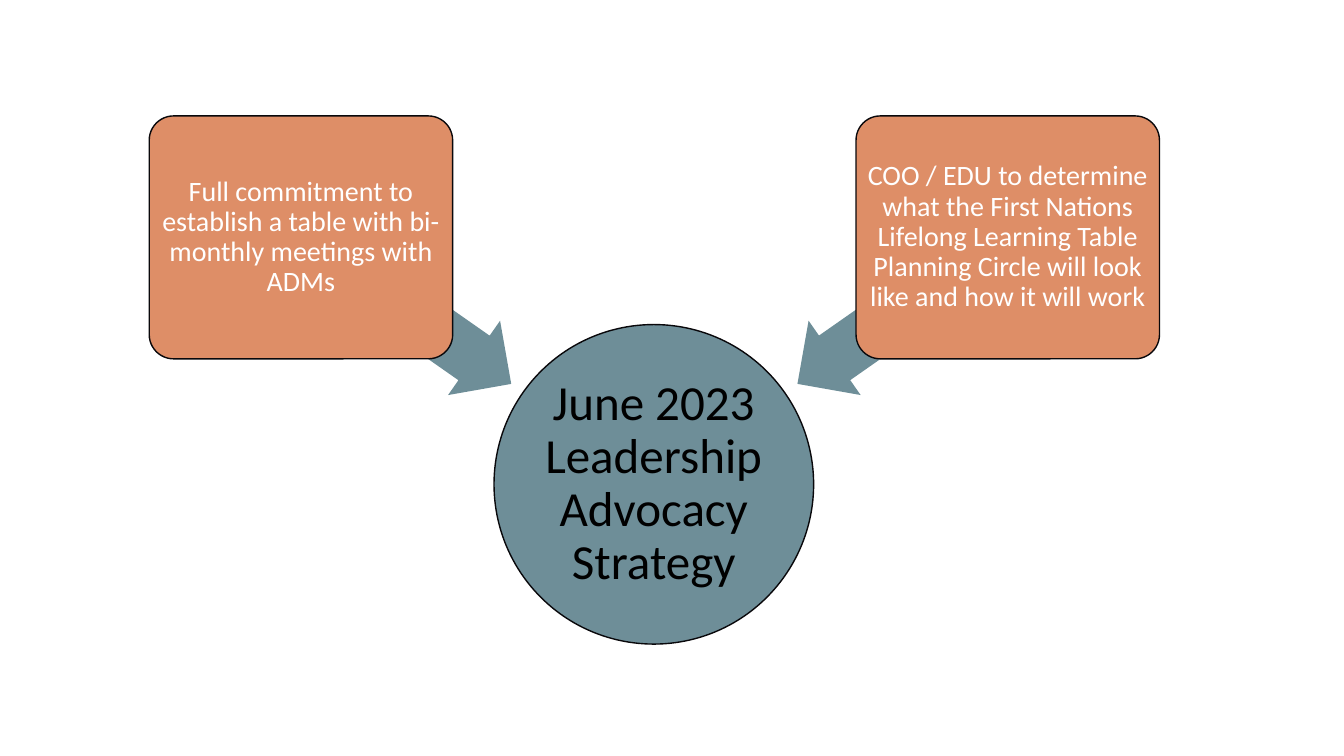
from dataclasses import dataclass

from pptx import Presentation
from pptx.dml.color import RGBColor
from pptx.enum.shapes import MSO_SHAPE
from pptx.enum.text import MSO_ANCHOR, PP_ALIGN
from pptx.shapes.autoshape import Shape
from pptx.slide import Slide
from pptx.util import Inches, Pt

OVAL = MSO_SHAPE.OVAL
ROUNDED = MSO_SHAPE.ROUNDED_RECTANGLE
LEFT_ARROW = MSO_SHAPE.LEFT_ARROW
MIDDLE = MSO_ANCHOR.MIDDLE
CENTER = PP_ALIGN.CENTER

TEAL, ORANGE, OUTLINE = "6E8E98", "DE8E67", "09080B"
BLACK, WHITE = "000000", "FFFFFF"
CARD_TOP, CARD_WIDTH, CARD_HEIGHT = 1.15, 3.01, 2.41
ARROW_TOP, ARROW_WIDTH, ARROW_HEIGHT = 2.63, 2.54, 0.9


@dataclass
class Commitment:
    text: str
    card_left: float
    arrow_left: float
    arrow_rotation: float


COMMITMENTS = [
    Commitment("Full commitment to establish a table with bi-monthly meetings with ADMs",
               1.48, 2.76, 215),
    Commitment("COO / EDU to determine what the First Nations Lifelong Learning Table "
               "Planning Circle will look like and how it will work",
               8.49, 7.68, 325),
]


def color(value: str) -> RGBColor:
    return RGBColor.from_string(value)


def add_box(page: Slide, kind: MSO_SHAPE, left: float, top: float, width: float,
            height: float, fill: str, line: str | None = None) -> Shape:
    box = page.shapes.add_shape(kind, Inches(left), Inches(top), Inches(width), Inches(height))
    box.shadow.inherit = False
    box.fill.solid()
    box.fill.fore_color.rgb = color(fill)
    if line:
        box.line.color.rgb = color(line)
        box.line.width = Pt(1)
    else:
        box.line.fill.background()
    return box


def write(box: Shape, text: str, *, size: float, ink: str, inset: float) -> None:
    frame = box.text_frame
    frame.word_wrap = True
    frame.vertical_anchor = MIDDLE
    frame.margin_left = frame.margin_right = Inches(inset)
    frame.margin_top = frame.margin_bottom = Inches(inset)
    para = frame.paragraphs[0]
    para.alignment = CENTER
    para.line_spacing = 0.9
    span = para.add_run()
    span.text = text
    span.font.name = "Calibri"
    span.font.size = Pt(size)
    span.font.color.rgb = color(ink)


def add_commitment(page: Slide, item: Commitment) -> None:
    arrow = add_box(page, LEFT_ARROW, item.arrow_left, ARROW_TOP,
                    ARROW_WIDTH, ARROW_HEIGHT, TEAL)
    arrow.adjustments[0] = 0.6
    arrow.adjustments[1] = 0.5
    arrow.rotation = item.arrow_rotation
    card = add_box(page, ROUNDED, item.card_left, CARD_TOP,
                   CARD_WIDTH, CARD_HEIGHT, ORANGE, OUTLINE)
    card.adjustments[0] = 0.1
    write(card, item.text, size=20, ink=WHITE, inset=0.04)


def main() -> None:
    deck = Presentation()
    deck.slide_width, deck.slide_height = Inches(13.33), Inches(7.5)
    page = deck.slides.add_slide(deck.slide_layouts[6])

    # Central strategy
    strategy = add_box(page, OVAL, 4.9, 3.22, 3.17, 3.17, TEAL, OUTLINE)
    write(strategy, "June 2023 Leadership Advocacy Strategy", size=35, ink=BLACK, inset=0.02)

    # Commitments pointing to the strategy
    for item in COMMITMENTS:
        add_commitment(page, item)

    deck.save("out.pptx")


if __name__ == "__main__":
    main()
